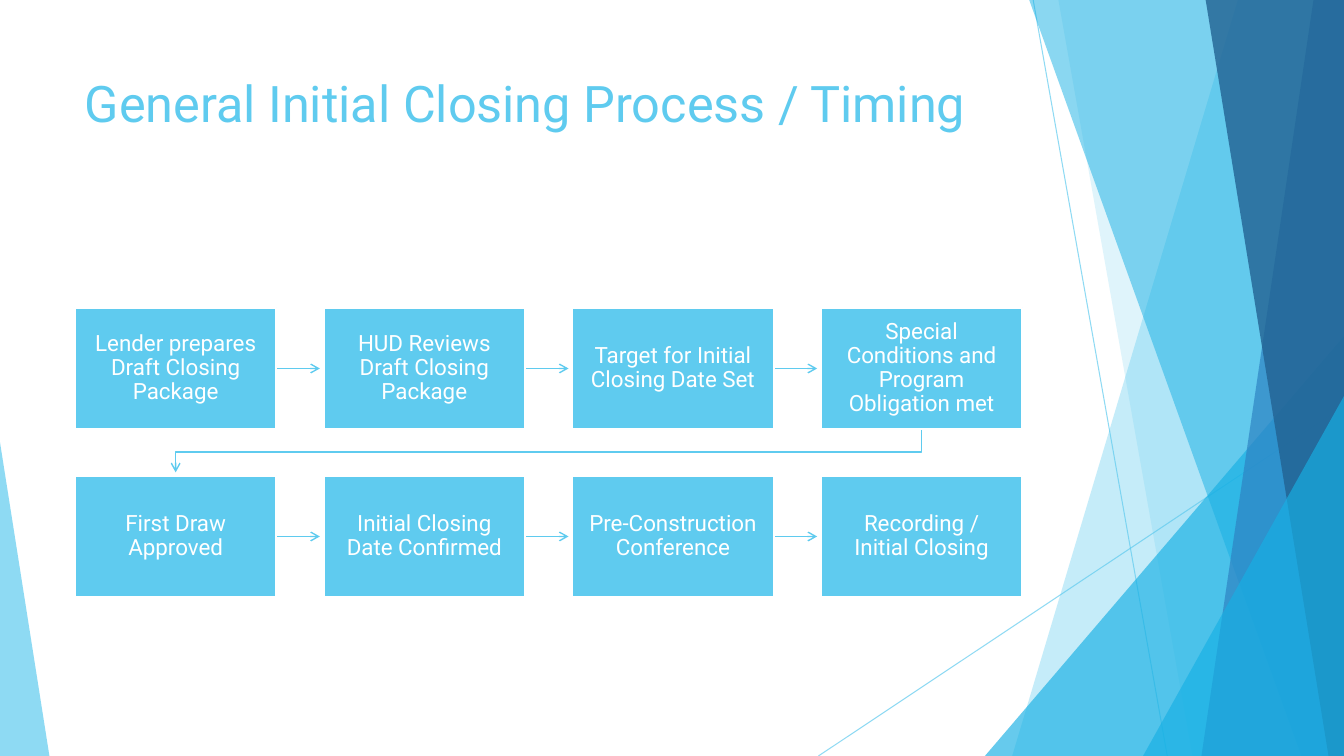
from dataclasses import dataclass

from lxml import etree
from pptx import Presentation
from pptx.dml.color import RGBColor
from pptx.enum.shapes import MSO_CONNECTOR, MSO_SHAPE
from pptx.enum.text import MSO_ANCHOR, MSO_AUTO_SIZE, PP_ALIGN
from pptx.oxml.ns import qn
from pptx.util import Pt

STRAIGHT = MSO_CONNECTOR.STRAIGHT
RECTANGLE = MSO_SHAPE.RECTANGLE
TRIANGLE = MSO_SHAPE.ISOSCELES_TRIANGLE
TOP, MIDDLE = MSO_ANCHOR.TOP, MSO_ANCHOR.MIDDLE
LEFT, CENTER = PP_ALIGN.LEFT, PP_ALIGN.CENTER
NO_AUTOFIT = MSO_AUTO_SIZE.NONE

WIDTH, HEIGHT = 960, 540
FONT = "Roboto"
SKY, AZURE, BLUE, NAVY, WHITE = "5FCBEF", "17B0E4", "2E83C3", "226292", "FFFFFF"

# Process grid
GRID_LEFT, GRID_TOP = 53.5, 220
STEP_WIDTH, STEP_HEIGHT = 144, 86.4
COLUMN_PITCH, ROW_PITCH = 177.6, 120
ARROW_LENGTH = 31
TURN_DROP, RETURN_DROP = 16.5, 31


@dataclass
class Ray:
    start: tuple[float, float]
    end: tuple[float, float]


@dataclass
class Band:
    """Facet reaching from a slanted left edge to the right slide edge."""
    top_x: float
    bottom_x: float
    colour: str
    opacity: int


@dataclass
class Corner:
    """Right-angled triangle standing on the bottom slide edge."""
    left: float
    top: float
    width: float
    apex: float
    colour: str
    opacity: int


RAYS = [
    Ray((738, 0), (833.8, HEIGHT)),
    Ray((WIDTH, 290), (584.6, HEIGHT)),
]
FACETS = [
    Band(884.2, 723, SKY, 36),
    Band(756, 851.8, SKY, 20),
    Corner(703.5, 240, 256.5, 1, AZURE, 66),
    Band(735.2, 929.5, AZURE, 50),
    Band(938.2, 858.2, BLUE, 70),
    Band(861.2, 949, NAVY, 80),
    Corner(816.5, 283, 143.5, 1, AZURE, 66),
    Corner(0, 316, 35.3, 0, SKY, 70),
]
STEPS = [
    ["Lender prepares Draft Closing Package", "HUD Reviews Draft Closing Package",
     "Target for Initial Closing Date Set",
     "Special Conditions and Program Obligation met"],
    ["First Draw Approved", "Initial Closing Date Confirmed",
     "Pre-Construction Conference", "Recording /\nInitial Closing"],
]


def rgb(colour: str) -> RGBColor:
    return RGBColor.from_string(colour)


def set_opacity(shape, percent: int) -> None:
    for colour in shape._element.spPr.iter(qn("a:srgbClr")):
        etree.SubElement(colour, qn("a:alpha")).set("val", str(percent * 1000))


def style_line(shape, width: float) -> None:
    shape.line.color.rgb = rgb(SKY)
    shape.line.width = Pt(width)


def add_arrowhead(shape) -> None:
    line = shape.line._get_or_add_ln()
    etree.SubElement(line, qn("a:tailEnd")).set("type", "arrow")


def draw_line(slide, start: tuple, end: tuple, width: float):
    connector = slide.shapes.add_connector(
        STRAIGHT, *(Pt(value) for value in (*start, *end)))
    style_line(connector, width)
    etree.SubElement(connector._element.spPr, qn("a:effectLst"))
    return connector


def draw_path(slide, points: list, closed: bool):
    corners = [(Pt(x), Pt(y)) for x, y in points]
    builder = slide.shapes.build_freeform(*corners[0])
    builder.add_line_segments(corners[1:], close=closed)
    shape = builder.convert_to_shape()
    shape.shadow.inherit = False
    return shape


def draw_facet(slide, facet: Band | Corner) -> None:
    if isinstance(facet, Band):
        shape = draw_path(slide, [(facet.top_x, 0), (WIDTH, 0), (WIDTH, HEIGHT),
                                  (facet.bottom_x, HEIGHT)], closed=True)
    else:
        shape = slide.shapes.add_shape(TRIANGLE, Pt(facet.left), Pt(facet.top),
                                       Pt(facet.width), Pt(HEIGHT - facet.top))
        shape.adjustments[0] = facet.apex
        shape.shadow.inherit = False
    shape.fill.solid()
    shape.fill.fore_color.rgb = rgb(facet.colour)
    shape.line.fill.background()
    set_opacity(shape, facet.opacity)


def write_text(shape, text: str, size: float, colour: str, alignment, anchor) -> None:
    frame = shape.text_frame
    frame.word_wrap = True
    frame.auto_size = NO_AUTOFIT
    frame.vertical_anchor = anchor
    paragraph = frame.paragraphs[0]
    paragraph.alignment = alignment
    for index, line in enumerate(text.split("\n")):
        if index:
            paragraph.add_line_break()
        run = paragraph.add_run()
        run.text = line
        run.font.name = FONT
        run.font.size = Pt(size)
        run.font.color.rgb = rgb(colour)


def draw_step(slide, left: float, top: float, text: str) -> None:
    box = slide.shapes.add_shape(RECTANGLE, Pt(left), Pt(top),
                                 Pt(STEP_WIDTH), Pt(STEP_HEIGHT))
    box.shadow.inherit = False
    box.fill.solid()
    box.fill.fore_color.rgb = rgb(SKY)
    box.line.color.rgb = rgb(WHITE)
    box.line.width = Pt(1.5)
    frame = box.text_frame
    frame.margin_left = frame.margin_right = Pt(8.5)
    frame.margin_top = frame.margin_bottom = Pt(8.5)
    write_text(box, text, 16, WHITE, CENTER, MIDDLE)
    frame.paragraphs[0].line_spacing = 0.9


def draw_return_arrow(slide) -> None:
    first = GRID_LEFT + STEP_WIDTH / 2
    last = first + COLUMN_PITCH * (len(STEPS[0]) - 1)
    bottom = GRID_TOP + STEP_HEIGHT
    arrow = draw_path(slide, [(last, bottom), (last, bottom + TURN_DROP),
                              (first, bottom + TURN_DROP),
                              (first, bottom + RETURN_DROP)], closed=False)
    arrow.fill.background()
    style_line(arrow, 1)
    add_arrowhead(arrow)


def main() -> None:
    presentation = Presentation()
    presentation.slide_width, presentation.slide_height = Pt(WIDTH), Pt(HEIGHT)
    slide = presentation.slides.add_slide(presentation.slide_layouts[5])

    # Decorative facets
    for ray in RAYS:
        set_opacity(draw_line(slide, ray.start, ray.end, 0.75), 70)
    for facet in FACETS:
        draw_facet(slide, facet)

    # Title
    title = slide.shapes.title
    title.left, title.top, title.width, title.height = (
        Pt(53.3), Pt(48), Pt(677), Pt(104))
    write_text(title, "General Initial Closing Process / Timing", 36, SKY, LEFT, TOP)

    # Process steps with their arrows
    draw_return_arrow(slide)
    for row, texts in enumerate(STEPS):
        top = GRID_TOP + row * ROW_PITCH
        middle = top + STEP_HEIGHT / 2
        for column, text in enumerate(texts):
            left = GRID_LEFT + column * COLUMN_PITCH
            right = left + STEP_WIDTH
            if column < len(texts) - 1:
                add_arrowhead(draw_line(slide, (right, middle),
                                        (right + ARROW_LENGTH, middle), 1))
            draw_step(slide, left, top, text)

    presentation.save("out.pptx")


if __name__ == "__main__":
    main()
